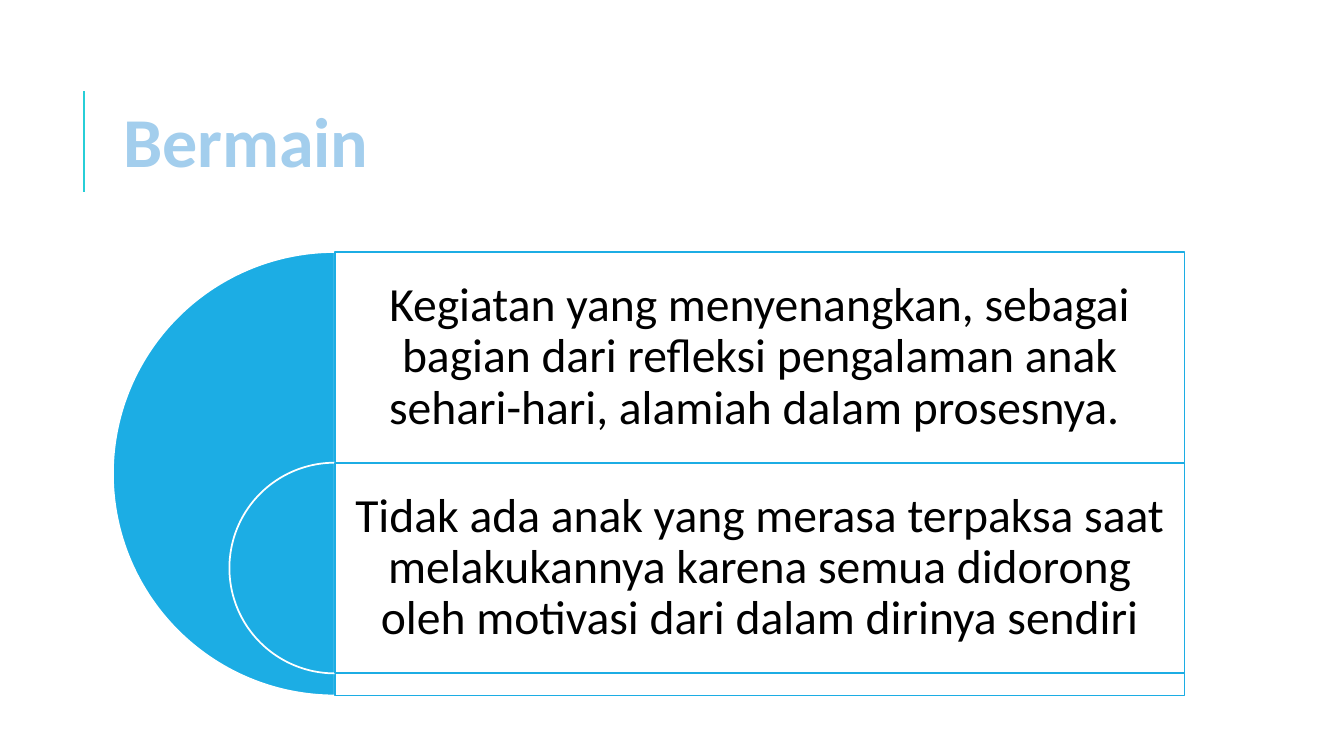
from lxml.etree import SubElement
from pptx import Presentation
from pptx.dml.color import RGBColor
from pptx.enum.shapes import MSO_CONNECTOR, MSO_SHAPE
from pptx.enum.text import MSO_ANCHOR, PP_ALIGN
from pptx.oxml.ns import qn
from pptx.util import Inches, Pt


def paint(color_format, hex_color):
    color_format.rgb = RGBColor.from_string(hex_color)


def add_filled_shape(kind, left, top, width, height, fill, line):
    shape = slide.shapes.add_shape(
        kind, Inches(left), Inches(top), Inches(width), Inches(height))
    shape.shadow.inherit = False
    shape.fill.solid()
    paint(shape.fill.fore_color, fill)
    paint(shape.line.color, line)
    shape.line.width = Pt(1.25)
    return shape


presentation = Presentation()
presentation.slide_width = Inches(13.33)
presentation.slide_height = Inches(7.5)
slide = presentation.slides.add_slide(presentation.slide_layouts[5])

# Accent line beside the title
accent = slide.shapes.add_connector(
    MSO_CONNECTOR.STRAIGHT, Inches(0.83), Inches(1.9), Inches(0.83), Inches(0.9))
paint(accent.line.color, "27CED7")
accent.line.width = Pt(1.5)
SubElement(accent._element.spPr, qn("a:effectLst"))

# Title
title = slide.shapes.title
title.left, title.top = Inches(1.12), Inches(0.64)
title.width, title.height = Inches(10.63), Inches(1.64)
title.text_frame.text = "Bermain"
title.text_frame.vertical_anchor = MSO_ANCHOR.MIDDLE
paragraph = title.text_frame.paragraphs[0]
paragraph.alignment = PP_ALIGN.LEFT
paragraph.line_spacing = 0.8
paragraph.font.name = "Calibri"
paragraph.font.size = Pt(50)
paragraph.font.bold = True
paint(paragraph.font.color, "A3CEED")

# Nested half circles, each with a panel starting at its centre
BLUE, WHITE = "1CADE4", "FFFFFF"
PANEL_LEFT, PANEL_WIDTH = 3.32, 8.43
FIRST_TOP, TEXT_HEIGHT = 2.5, 2.09
levels = [
    (4.4, "Kegiatan yang menyenangkan, sebagai bagian dari refleksi "
          "pengalaman anak sehari-hari, alamiah dalam prosesnya. "),
    (2.09, "Tidak ada anak yang merasa terpaksa saat melakukannya karena "
           "semua didorong oleh motivasi dari dalam dirinya sendiri"),
]
for index, (diameter, text) in enumerate(levels):
    top = FIRST_TOP + index * TEXT_HEIGHT

    half_circle = add_filled_shape(
        MSO_SHAPE.PIE, PANEL_LEFT - diameter / 2, top, diameter, diameter, BLUE, WHITE)
    half_circle.adjustments[0] = 54
    half_circle.adjustments[1] = 162

    panel = add_filled_shape(
        MSO_SHAPE.RECTANGLE, PANEL_LEFT, top, PANEL_WIDTH, diameter, WHITE, BLUE)
    panel_color = panel._element.spPr.find(qn("a:solidFill"))[0]
    SubElement(panel_color, qn("a:alpha"), val="90000")

    text_box = slide.shapes.add_textbox(
        Inches(PANEL_LEFT), Inches(top), Inches(PANEL_WIDTH), Inches(TEXT_HEIGHT))
    frame = text_box.text_frame
    frame.word_wrap = True
    frame.vertical_anchor = MSO_ANCHOR.MIDDLE
    frame.margin_left = frame.margin_right = Inches(0.14)
    frame.margin_top = frame.margin_bottom = Inches(0.14)
    frame.text = text
    paragraph = frame.paragraphs[0]
    paragraph.alignment = PP_ALIGN.CENTER
    paragraph.line_spacing = 0.9
    paragraph.font.name = "Calibri"
    paragraph.font.size = Pt(34)
    paint(paragraph.font.color, "000000")

presentation.save("out.pptx")
